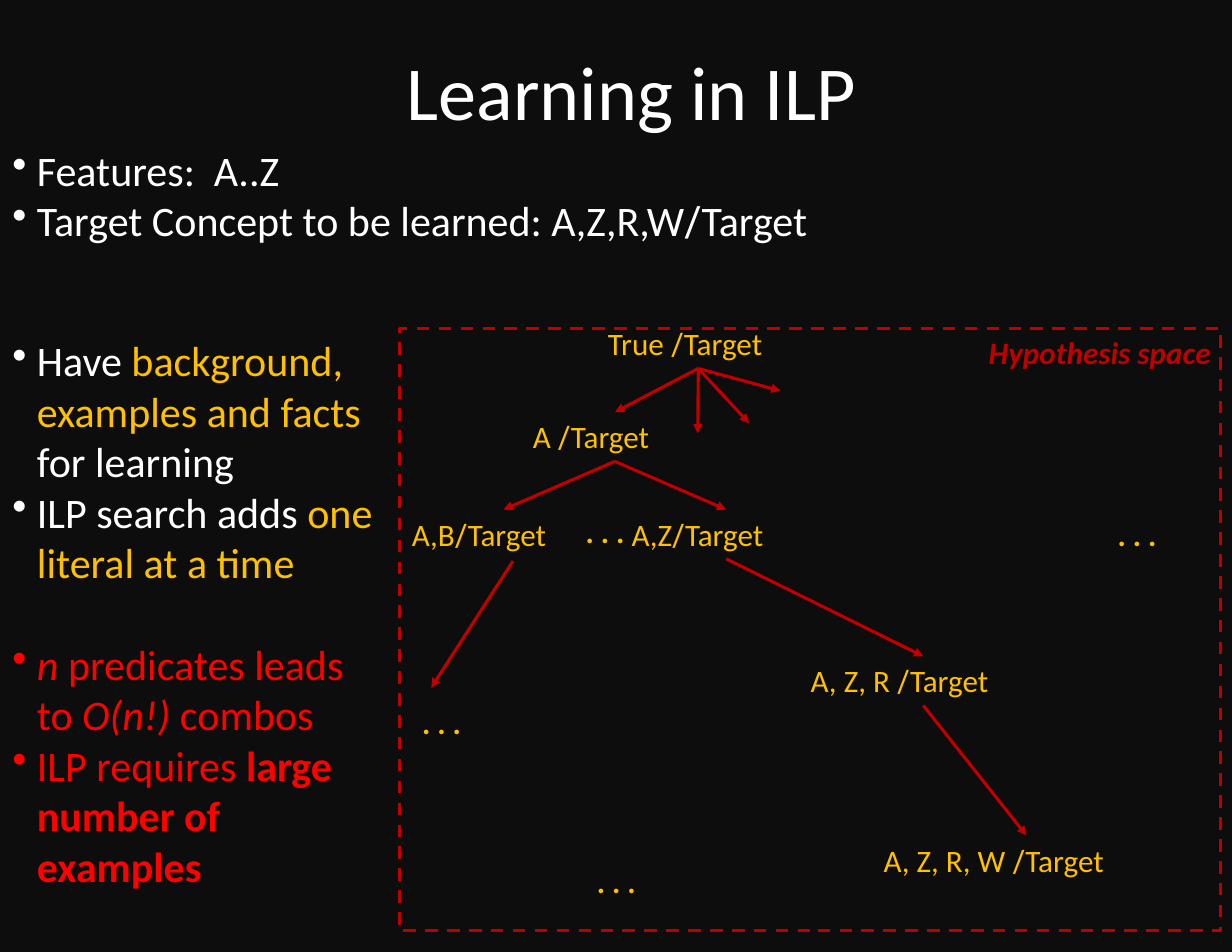
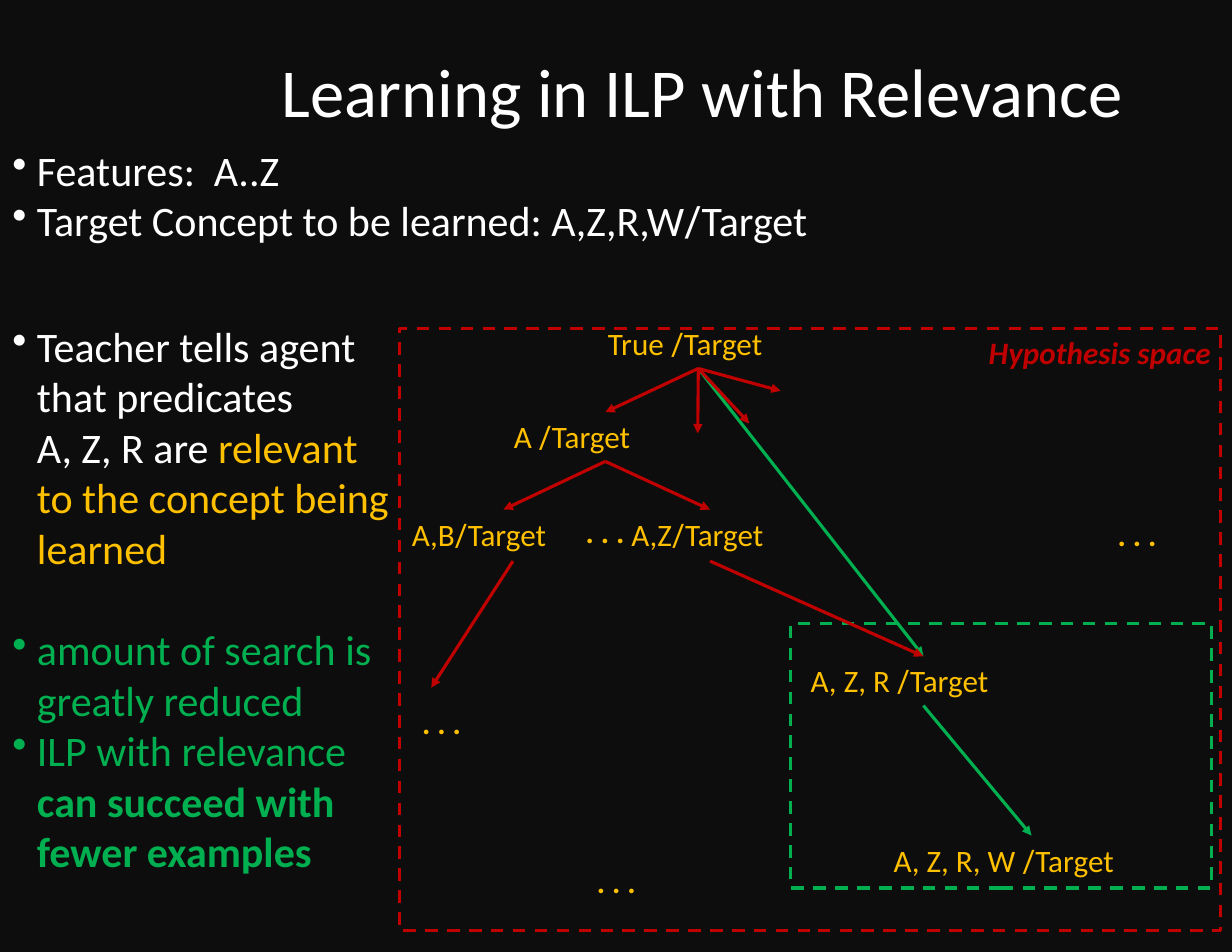
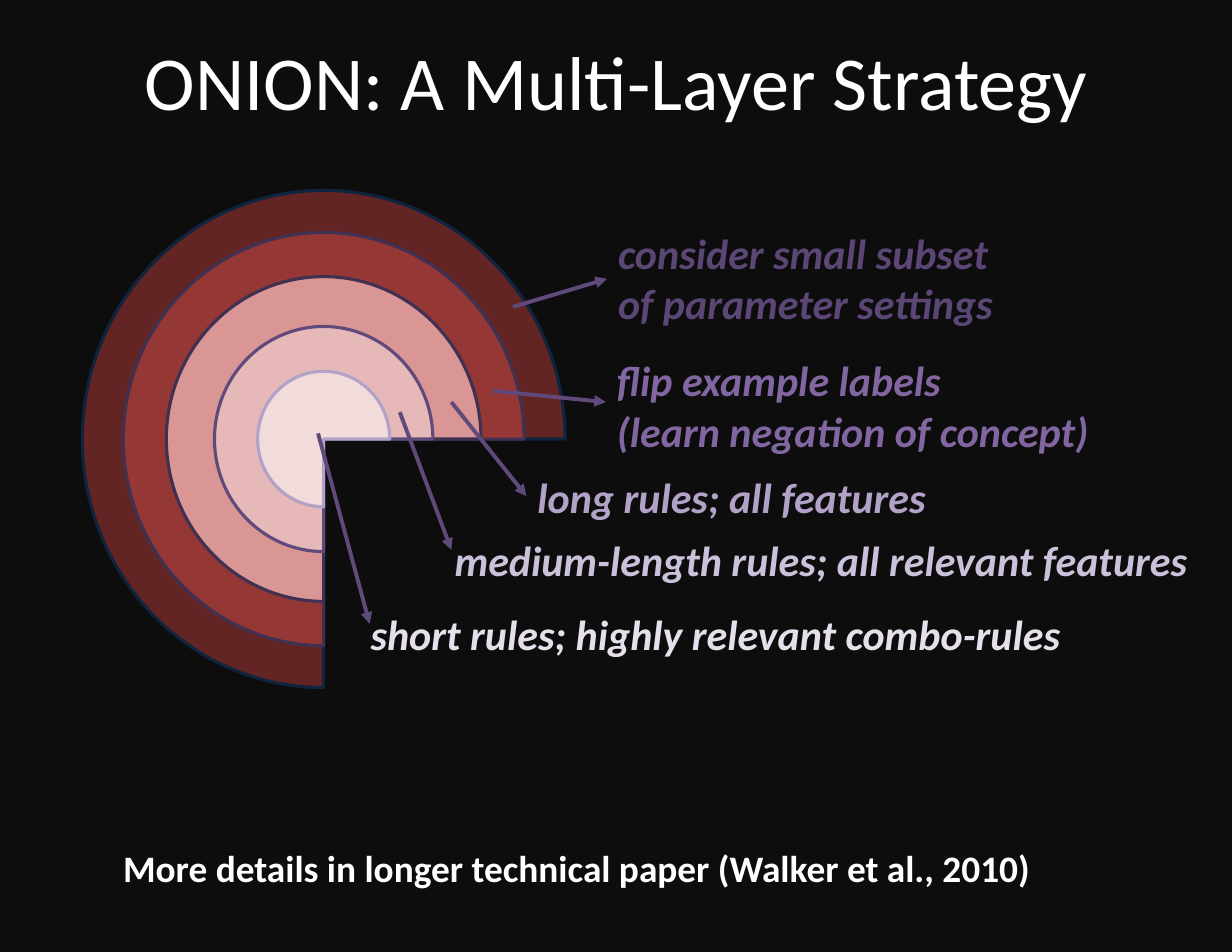
from dataclasses import dataclass
from typing import NamedTuple, Optional, Union

from lxml.etree import SubElement
from pptx import Presentation
from pptx.dml.color import RGBColor
from pptx.enum.dml import MSO_LINE
from pptx.enum.shapes import MSO_CONNECTOR, MSO_SHAPE
from pptx.enum.text import MSO_ANCHOR, MSO_AUTO_SIZE, PP_ALIGN
from pptx.oxml.ns import qn
from pptx.util import Inches, Pt

FONT, SLASH_FONT = "Calibri", "Roboto"
BACKGROUND, WHITE = "0D0D0D", "FFFFFF"
AMBER, DARK_RED, RED, GREEN = "FFC000", "C00000", "FF0000", "00B050"
PURPLE = "604A7B"
BULLET_INDENT = 0.22
TOP, BOTTOM = 0, 2


class Area(NamedTuple):
    left: float
    top: float
    width: float
    height: float


class Point(NamedTuple):
    x: float
    y: float


class Style(NamedTuple):
    size: float
    color: str = WHITE
    bold: bool = False
    italic: bool = False


class Span(NamedTuple):
    """A piece of a paragraph; None keeps the style of the paragraph."""
    text: str
    color: Optional[str] = None
    bold: Optional[bool] = None
    italic: Optional[bool] = None
    font: Optional[str] = None


@dataclass
class Para:
    spans: list[Span]
    style: Style
    bullet: bool = False
    space_before: float = 0
    align: PP_ALIGN = PP_ALIGN.LEFT


@dataclass
class Arrow:
    """Runs from the bottom of a named label, or a point, to the top of one."""
    start: Union[str, Point]
    end: Union[str, Point]
    color: str = DARK_RED
    width: float = 2


class Layer(NamedTuple):
    width: float
    height: float
    fill: str
    line: str


class Note(NamedTuple):
    area: Area
    text: str
    color: str


def rgb(color: str) -> RGBColor:
    return RGBColor.from_string(color)


def inches(area: Area) -> list:
    return [Inches(value) for value in area]


def set_margins(frame, across: float, down: float) -> None:
    frame.margin_left = frame.margin_right = Inches(across)
    frame.margin_top = frame.margin_bottom = Inches(down)


def set_font(font, style: Style) -> None:
    font.name = FONT
    font.size = Pt(style.size)
    font.color.rgb = rgb(style.color)
    font.bold, font.italic = style.bold, style.italic


def add_span(paragraph, span: Span) -> None:
    for index, line in enumerate(span.text.split("\n")):
        if index:
            paragraph.add_line_break()
        if not line:
            continue
        run = paragraph.add_run()
        run.text = line
        if span.color:
            run.font.color.rgb = rgb(span.color)
        if span.bold is not None:
            run.font.bold = span.bold
        if span.italic is not None:
            run.font.italic = span.italic
        if span.font:
            run.font.name = span.font


def write_para(paragraph, para: Para) -> None:
    if para.bullet:
        properties = paragraph._p.get_or_add_pPr()
        properties.set("marL", str(Inches(BULLET_INDENT)))
        properties.set("indent", str(-Inches(BULLET_INDENT)))
        SubElement(properties, qn("a:buChar")).set("char", "•")
    paragraph.alignment = para.align
    if para.space_before:
        paragraph.space_before = Pt(para.space_before)
    set_font(paragraph.font, para.style)
    for span in para.spans:
        add_span(paragraph, span)


def add_text(page, area: Area, paras: list[Para], wrap: bool = True):
    box = page.shapes.add_textbox(*inches(area))
    frame = box.text_frame
    frame.word_wrap = wrap
    frame.auto_size = MSO_AUTO_SIZE.SHAPE_TO_FIT_TEXT
    for index, para in enumerate(paras):
        write_para(frame.add_paragraph() if index else frame.paragraphs[0], para)
    return box


def add_body(page, area: Area, paras: list[Para]) -> None:
    set_margins(add_text(page, area, paras).text_frame, 0.11, 0.06)


def add_page(deck, title: str, area: Area, size: float = 49):
    page = deck.slides.add_slide(deck.slide_layouts[5])
    box = page.shapes.title
    box.left, box.top, box.width, box.height = inches(area)
    frame = box.text_frame
    frame.vertical_anchor = MSO_ANCHOR.MIDDLE
    set_margins(frame, 0.11, 0.06)
    write_para(frame.paragraphs[0],
               Para([Span(title)], Style(size), align=PP_ALIGN.CENTER))
    return page


def add_dashed_frame(page, area: Area, color: str) -> None:
    shape = page.shapes.add_shape(MSO_SHAPE.RECTANGLE, *inches(area))
    shape.shadow.inherit = False
    shape.fill.background()
    shape.line.color.rgb = rgb(color)
    shape.line.width = Pt(2)
    shape.line.dash_style = MSO_LINE.DASH


def add_arrow(page, arrow: Arrow, labels: dict) -> None:
    start, end = (Point(0, 0) if isinstance(place, str) else place
                  for place in (arrow.start, arrow.end))
    connector = page.shapes.add_connector(
        MSO_CONNECTOR.STRAIGHT, *inches(Area(*start, *end)))
    if isinstance(arrow.start, str):
        connector.begin_connect(labels[arrow.start], BOTTOM)
    if isinstance(arrow.end, str):
        connector.end_connect(labels[arrow.end], TOP)
    connector.line.color.rgb = rgb(arrow.color)
    connector.line.width = Pt(arrow.width)
    properties = connector._element.spPr
    SubElement(properties.find(qn("a:ln")), qn("a:tailEnd")).set("type", "triangle")
    SubElement(properties, qn("a:effectLst"))


def rule_spans(literals: str) -> list[Span]:
    return [Span(literals), Span("/", font=SLASH_FONT), Span("Target")]


BODY = Style(27)
LABEL = Style(20, AMBER)
BLANK_LINE = 33

HYPOTHESIS_SPACE = Area(3.57, 2.93, 7.33, 5.38)
ELLIPSES = [Point(5.13, 4.53), Point(3.67, 6.23), Point(5.23, 7.65), Point(9.88, 4.55)]
SHARED_LABELS = {
    "True ": Area(5.33, 2.85, 1.81, 0.44),
    "A,B": Area(3.58, 4.55, 1.83, 0.44),
    "A, Z, R ": Area(7.14, 5.86, 2.21, 0.44),
}
SHARED_ARROWS = [
    Arrow("True ", "A "),
    Arrow("A ", "A,B"),
    Arrow(Point(4.58, 5.01), Point(3.85, 6.14)),
    Arrow("True ", Point(6.23, 3.87)),
    Arrow("True ", Point(6.69, 3.78)),
    Arrow("True ", Point(6.97, 3.49)),
]


def add_features(page) -> None:
    target = rule_spans("Target Concept to be learned: A,Z,R,W")
    add_body(page, Area(0, 1.23, 8.58, 1.02), [
        Para([Span("Features:  A..Z")], BODY, bullet=True),
        Para(target, BODY, bullet=True),
    ])


def add_search_tree(page, own_labels: dict[str, Area], own_arrows: list[Arrow]) -> None:
    add_dashed_frame(page, HYPOTHESIS_SPACE, DARK_RED)
    heading = Para([Span("Hypothesis space")], Style(20, DARK_RED, True, True),
                   align=PP_ALIGN.RIGHT)
    add_text(page, Area(8.71, 2.93, 2.2, 0.44), [heading], wrap=False)
    labels = {
        literals: add_text(page, area, [Para(rule_spans(literals), LABEL)])
        for literals, area in (SHARED_LABELS | own_labels).items()
    }
    for arrow in own_arrows + SHARED_ARROWS:
        add_arrow(page, arrow, labels)
    for corner in ELLIPSES:
        add_text(page, Area(*corner, 0.55, 0.44),
                 [Para([Span(". . .")], LABEL._replace(bold=True))], wrap=False)


def build_learning(deck) -> None:
    page = add_page(deck, "Learning in ILP", Area(2.29, 0.09, 6.69, 1.42))
    add_features(page)
    warning = Style(27, RED)
    add_body(page, Area(0, 2.93, 3.76, 5.11), [
        Para([Span("Have "), Span("background,\nexamples and facts\n", AMBER),
              Span("for learning")], BODY, bullet=True),
        Para([Span("ILP search adds "), Span("one\nliteral at a time", AMBER)],
             BODY, bullet=True),
        Para([Span("n", italic=True), Span(" predicates leads\nto "),
              Span("O(n!)", italic=True), Span(" combos")],
             warning, bullet=True, space_before=BLANK_LINE),
        Para([Span("ILP requires "), Span("large\nnumber of\nexamples", bold=True)],
             warning, bullet=True),
    ])
    add_search_tree(page, {
        "A ": Area(4.66, 3.68, 1.66, 0.44),
        "A,Z": Area(5.54, 4.55, 1.89, 0.44),
        "A, Z, R, W ": Area(7.79, 7.46, 2.75, 0.44),
    }, [
        Arrow("A ", "A,Z"),
        Arrow("A,Z", "A, Z, R "),
        Arrow("A, Z, R ", "A, Z, R, W "),
    ])


def build_relevance(deck) -> None:
    page = add_page(deck, "Learning in ILP with Relevance",
                    Area(2.29, 0.09, 7.97, 1.42), 44.1)
    add_dashed_frame(page, Area(7.06, 5.57, 3.76, 2.36), GREEN)
    benefit = Style(27, GREEN)
    add_body(page, Area(0, 2.8, 3.85, 5.11), [
        Para([Span("Teacher tells agent\nthat predicates\nA, Z, R are "),
              Span("relevant\nto the concept being\nlearned", AMBER)],
             BODY, bullet=True),
        Para([Span("amount of search is\ngreatly reduced")],
             benefit, bullet=True, space_before=BLANK_LINE),
        Para([Span("ILP with relevance\n"),
              Span("can succeed with\nfewer examples", bold=True)],
             benefit, bullet=True),
    ])
    add_search_tree(page, {
        "A ": Area(4.49, 3.68, 1.83, 0.44),
        "A,Z": Area(5.54, 4.55, 1.8, 0.44),
        "A, Z, R, W ": Area(7.88, 7.46, 2.66, 0.44),
    }, [
        Arrow("True ", "A, Z, R ", GREEN),
        Arrow("A ", Point(6.34, 4.55)),
        Arrow(Point(6.34, 5.01), "A, Z, R "),
        Arrow("A, Z, R ", "A, Z, R, W ", GREEN),
    ])
    add_features(page)


ONION_CENTER = Point(2.89, 3.92)
LAYERS = [
    Layer(4.31, 4.44, "632523", "0F243E"),
    Layer(3.58, 3.69, "953735", "403152"),
    Layer(2.81, 2.9, "D99694", "403152"),
    Layer(1.95, 2.01, "E6B9B8", PURPLE),
    Layer(1.18, 1.21, "F2DCDB", "B3A2C7"),
]
POINTERS = [
    (Point(2.84, 3.87), Point(3.3, 5.57)),
    (Point(3.57, 3.68), Point(4.03, 4.91)),
    (Point(4.03, 3.59), Point(4.7, 4.43)),
    (Point(4.4, 3.49), Point(5.41, 3.59)),
    (Point(4.58, 2.74), Point(5.42, 2.49)),
]
NOTES = [
    Note(Area(3.21, 5.38, 6.42, 0.56), "short rules; highly relevant combo-rules", "E6E0EC"),
    Note(Area(3.96, 4.72, 6.81, 0.56), "medium-length rules; all relevant features", "CCC1DA"),
    Note(Area(5.41, 3.12, 4.46, 1.01),
         "flip example labels\n(learn negation of concept)", "8166A2"),
    Note(Area(5.42, 1.98, 3.62, 1.01),
         "consider small subset\nof parameter settings", "5C4676"),
    Note(Area(4.7, 4.16, 3.7, 0.56), "long rules; all features", "B3A2C7"),
]


def add_layer(page, layer: Layer) -> None:
    """Draw a disc around the onion's centre without its lower right quarter."""
    area = Area(ONION_CENTER.x - layer.width / 2, ONION_CENTER.y - layer.height / 2,
                layer.width, layer.height)
    pie = page.shapes.add_shape(MSO_SHAPE.PIE, *inches(area))
    pie.adjustments[0] = 54  # 90 degrees, in units of 100000/60000 degree
    pie.adjustments[1] = 0
    pie.shadow.inherit = False
    pie.fill.solid()
    pie.fill.fore_color.rgb = rgb(layer.fill)
    pie.line.color.rgb = rgb(layer.line)
    pie.line.width = Pt(2)


def build_onion(deck) -> None:
    page = add_page(deck, "ONION: A Multi-Layer Strategy", Area(0.55, 0, 9.9, 1.42))
    for layer in LAYERS:
        add_layer(page, layer)
    for start, end in POINTERS:
        add_arrow(page, Arrow(start, end, PURPLE, 2.5), {})
    for note in NOTES:
        style = Style(27, note.color, bold=True, italic=True)
        add_text(page, note.area, [Para([Span(note.text)], style)], wrap=False)
    reference = Span("More details in longer technical paper (Walker et al., 2010)")
    add_text(page, Area(1, 7.5, 8.38, 0.5),
             [Para([reference], Style(24, bold=True))], wrap=False)


def main() -> None:
    deck = Presentation()
    deck.slide_width, deck.slide_height = Inches(11), Inches(8.5)
    backdrop = deck.slide_master.background.fill
    backdrop.solid()
    backdrop.fore_color.rgb = rgb(BACKGROUND)
    build_learning(deck)
    build_relevance(deck)
    build_onion(deck)
    deck.save("out.pptx")


if __name__ == "__main__":
    main()
